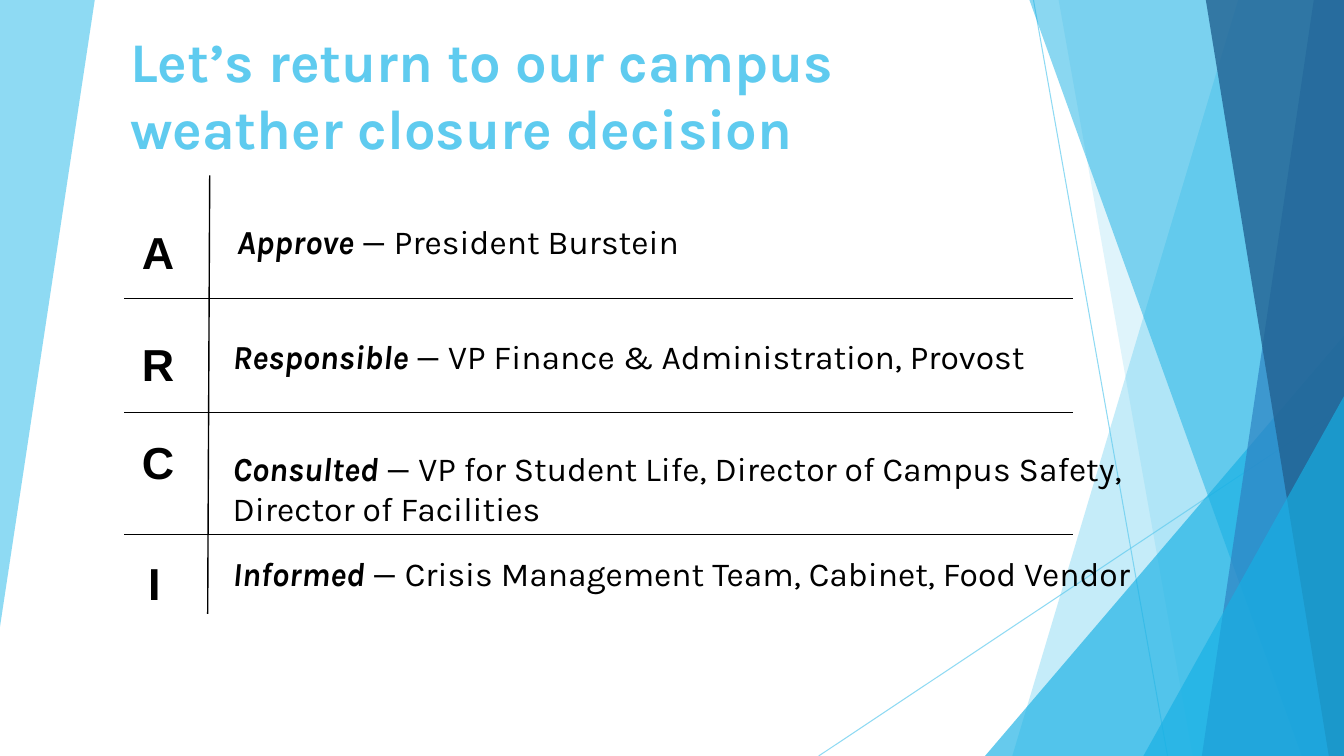
from lxml.etree import SubElement
from pptx import Presentation
from pptx.dml.color import RGBColor
from pptx.enum.shapes import MSO_CONNECTOR as Connector, MSO_SHAPE as Shape
from pptx.enum.text import MSO_ANCHOR as Anchor
from pptx.oxml.ns import qn
from pptx.util import Inches, Pt

WIDTH, HEIGHT = 13.33, 7.5
SKY, CYAN, BLUE, NAVY, BLACK = "5FCBEF", "17B0E4", "2E83C3", "226292", "000000"

# Right-hand bands: top-left x, bottom-left x, colour, opacity
BACK_BANDS = [(12.28, 10.04, SKY, 36), (10.5, 11.83, SKY, 20)]
FRONT_BANDS = [(10.21, 12.91, CYAN, 50), (13.03, 11.92, BLUE, 70),
               (11.96, 13.18, NAVY, 80)]

# Letter, letter left, letter top, role, people, text left, text top, text width, text height
ROLES = [
    ("A", 1.31, 2.18, "Approve", "President Burstein", 2.25, 2.14, 8.68, 0.5),
    ("R", 1.31, 3.29, "Responsible", "VP Finance & Administration, Provost",
     2.21, 3.28, 10.15, 0.5),
    ("C", 1.31, 4.26, "Consulted",
     "VP for Student Life, Director of Campus Safety, Director of Facilities",
     2.21, 4.39, 10.06, 0.91),
    ("I", 1.37, 5.46, "Informed", "Crisis Management Team, Cabinet, Food Vendor",
     2.21, 5.44, 10.06, 0.5),
]


def set_color(color_format, value, opacity=100):
    color_format.rgb = RGBColor.from_string(value)
    if opacity < 100:
        for element in color_format._xFill.iter(qn("a:srgbClr")):
            SubElement(element, qn("a:alpha"), val=str(opacity * 1000))


def paint(shape, color, opacity):
    shape.shadow.inherit = False
    shape.fill.solid()
    set_color(shape.fill.fore_color, color, opacity)
    shape.line.fill.background()


def add_polygon(slide, points, color, opacity):
    corners = [(Inches(x), Inches(y)) for x, y in points]
    builder = slide.shapes.build_freeform(*corners[0])
    builder.add_line_segments(corners[1:], close=True)
    paint(builder.convert_to_shape(), color, opacity)


def add_band(slide, top_x, bottom_x, color, opacity):
    points = [(top_x, 0), (WIDTH, 0), (WIDTH, HEIGHT), (bottom_x, HEIGHT)]
    add_polygon(slide, points, color, opacity)


def add_corner_triangle(slide, left, top, color, opacity):
    shape = slide.shapes.add_shape(
        Shape.ISOSCELES_TRIANGLE, Inches(left), Inches(top),
        Inches(WIDTH - left), Inches(HEIGHT - top))
    shape.adjustments[0] = 1
    paint(shape, color, opacity)


def add_line(slide, start, end, color=BLACK, width=1, opacity=100):
    ends = [Inches(value) for value in (*start, *end)]
    line = slide.shapes.add_connector(Connector.STRAIGHT, *ends)
    SubElement(line._element.spPr, qn("a:effectLst"))
    line.line.width = Pt(width)
    line.line.fill.solid()
    set_color(line.line.fill.fore_color, color, opacity)


def add_text(slide, box, runs, font_name, size, color=BLACK):
    """Add one paragraph; runs are (text, bold, italic)."""
    shape = slide.shapes.add_textbox(*[Inches(value) for value in box])
    frame = shape.text_frame
    frame.word_wrap = True
    paragraph = frame.paragraphs[0]
    paragraph.font.name = font_name
    paragraph.font.size = Pt(size)
    set_color(paragraph.font.color, color)
    for text, bold, italic in runs:
        run = paragraph.add_run()
        run.text = text
        run.font.bold = bold
        run.font.italic = italic
    return frame


def add_backdrop(slide):
    add_polygon(slide, [(0, 0), (0.94, 0), (0, 6.22)], SKY, 70)
    add_line(slide, (10.25, 0), (11.58, HEIGHT), SKY, 0.75, 70)
    add_line(slide, (WIDTH, 4.03), (8.12, HEIGHT), SKY, 0.75, 70)
    for band in BACK_BANDS:
        add_band(slide, *band)
    add_corner_triangle(slide, 9.77, 3.33, CYAN, 66)
    for band in FRONT_BANDS:
        add_band(slide, *band)
    add_corner_triangle(slide, 11.34, 3.93, CYAN, 66)


def add_title(slide, text):
    frame = add_text(slide, (1.22, 0.3, 9.13, 1.25), [(text, True, False)],
                     "Karla", 40, SKY)
    frame.vertical_anchor = Anchor.MIDDLE
    frame.margin_left = frame.margin_right = Inches(0.07)
    frame.margin_top = frame.margin_bottom = Inches(0.04)
    frame.paragraphs[0].space_after = Pt(12)


def add_role(slide, letter, letter_left, letter_top, role, people, *text_box):
    letter_width = 0.34 if letter == "I" else 0.55
    add_text(slide, (letter_left, letter_top, letter_width, 0.64),
             [(letter, True, False)], "Arial", 32)
    add_text(slide, text_box,
             [(f"{role} ", True, True), (f"— {people}", False, False)],
             "Karla", 24)


def main():
    presentation = Presentation()
    presentation.slide_width = Inches(WIDTH)
    presentation.slide_height = Inches(HEIGHT)
    slide = presentation.slides.add_slide(presentation.slide_layouts[6])

    add_backdrop(slide)
    add_title(slide, "Let’s return to our campus weather closure decision")

    # Ruled grid
    add_line(slide, (2.08, 1.74), (2.06, 6.09))
    for y in (2.96, 4.09, 5.3):
        add_line(slide, (1.23, y), (10.64, y))

    # Letters and roles
    for role in ROLES:
        add_role(slide, *role)

    presentation.save("out.pptx")


if __name__ == "__main__":
    main()
